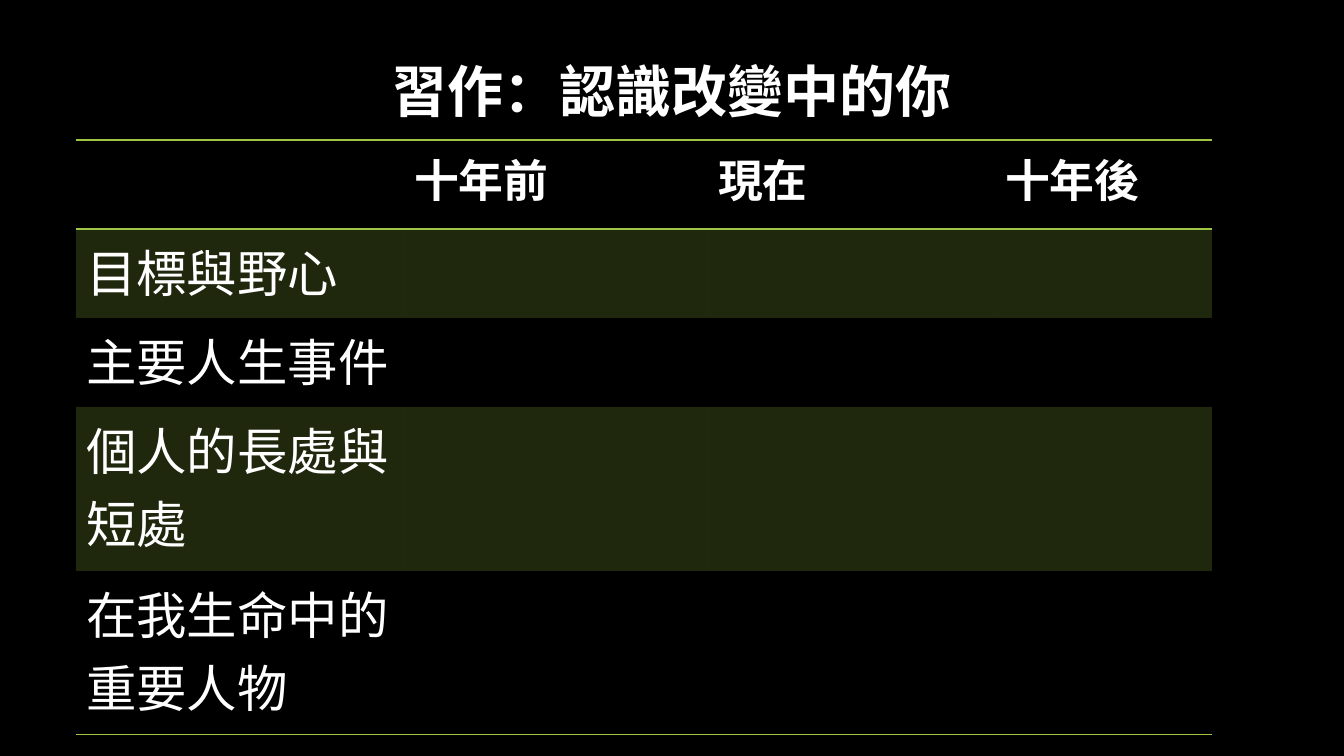
import pptx
import pptx.util
import pptx.dml.color
import pptx.enum.text
import pptx.oxml
import pptx.oxml.ns

WHITE = pptx.dml.color.RGBColor(0xFF, 0xFF, 0xFF)
BLACK = pptx.dml.color.RGBColor(0, 0, 0)
GREEN = pptx.dml.color.RGBColor(0x9E, 0xC5, 0x44)
FACE = "Roboto Slab"
PLAIN = "{2D5ABB26-0587-4C30-8999-92F81FD0307C}"
qn = pptx.oxml.ns.qn


def px(count):
    return pptx.util.Emu(round(count * 914400 / 100.8))


def style(run, size, bold):
    look = {"name": FACE, "size": pptx.util.Pt(size), "bold": bold}
    for key, value in look.items():
        setattr(run.font, key, value)
    run.font.color.rgb = WHITE


deck = pptx.Presentation()
deck.slide_width, deck.slide_height = px(1344), px(756)
slide = deck.slides.add_slide(deck.slide_layouts[5])
slide.background.fill.solid()
slide.background.fill.fore_color.rgb = BLACK

title = slide.shapes.title
place = {"left": 101, "top": 21, "width": 1141, "height": 146}
for key, value in place.items():
    setattr(title, key, px(value))
title.text_frame.text = "習作：認識改變中的你"
title.text_frame.vertical_anchor = pptx.enum.text.MSO_ANCHOR.MIDDLE
line = title.text_frame.paragraphs[0]
line.alignment = pptx.enum.text.PP_ALIGN.CENTER
line.line_spacing = 0.9
style(line.runs[0], 40, True)

rows = [
    (89, ["", "十年前", "現在", "十年後"]),
    (89, ["目標與野心", "", "", ""]),
    (89, ["主要人生事件", "", "", ""]),
    (164, ["個人的長處與短處", "", "", ""]),
    (164, ["在我生命中的重要人物", "", "", ""]),
]
widths = [328, 304, 287, 217]
edges = {0: ["lnT", "lnB"], 4: ["lnB"]}
banded = [1, 3]

frame = slide.shapes.add_table(
    len(rows), len(widths), px(76), px(140), px(sum(widths)), px(595))
table = frame.table
table.first_row = table.horz_banding = False
table._tbl.tblPr.find(qn("a:tableStyleId")).text = PLAIN
for col, width in zip(table.columns, widths):
    col.width = px(width)

for r, (height, words) in enumerate(rows):
    table.rows[r].height = px(height)
    for c, word in enumerate(words):
        cell = table.cell(r, c)
        props = cell._tc.get_or_add_tcPr()
        for edge in edges.get(r, []):
            props.append(pptx.oxml.parse_xml(
                f'<a:{edge} {pptx.oxml.ns.nsdecls("a")} w="12700"><a:solidFill>'
                f'<a:srgbClr val="{GREEN}"/></a:solidFill></a:{edge}>'))
        if r in banded:
            cell.fill.solid()
            cell.fill.fore_color.rgb = GREEN
            tint = props.find(".//" + qn("a:srgbClr"))
            tint.append(pptx.oxml.parse_xml(
                f'<a:alpha {pptx.oxml.ns.nsdecls("a")} val="20000"/>'))
        else:
            cell.fill.background()
        if word:
            cell.text = word
            run = cell.text_frame.paragraphs[0].runs[0]
            style(run, 36 if r else 32, r == 0)

deck.save("out.pptx")
